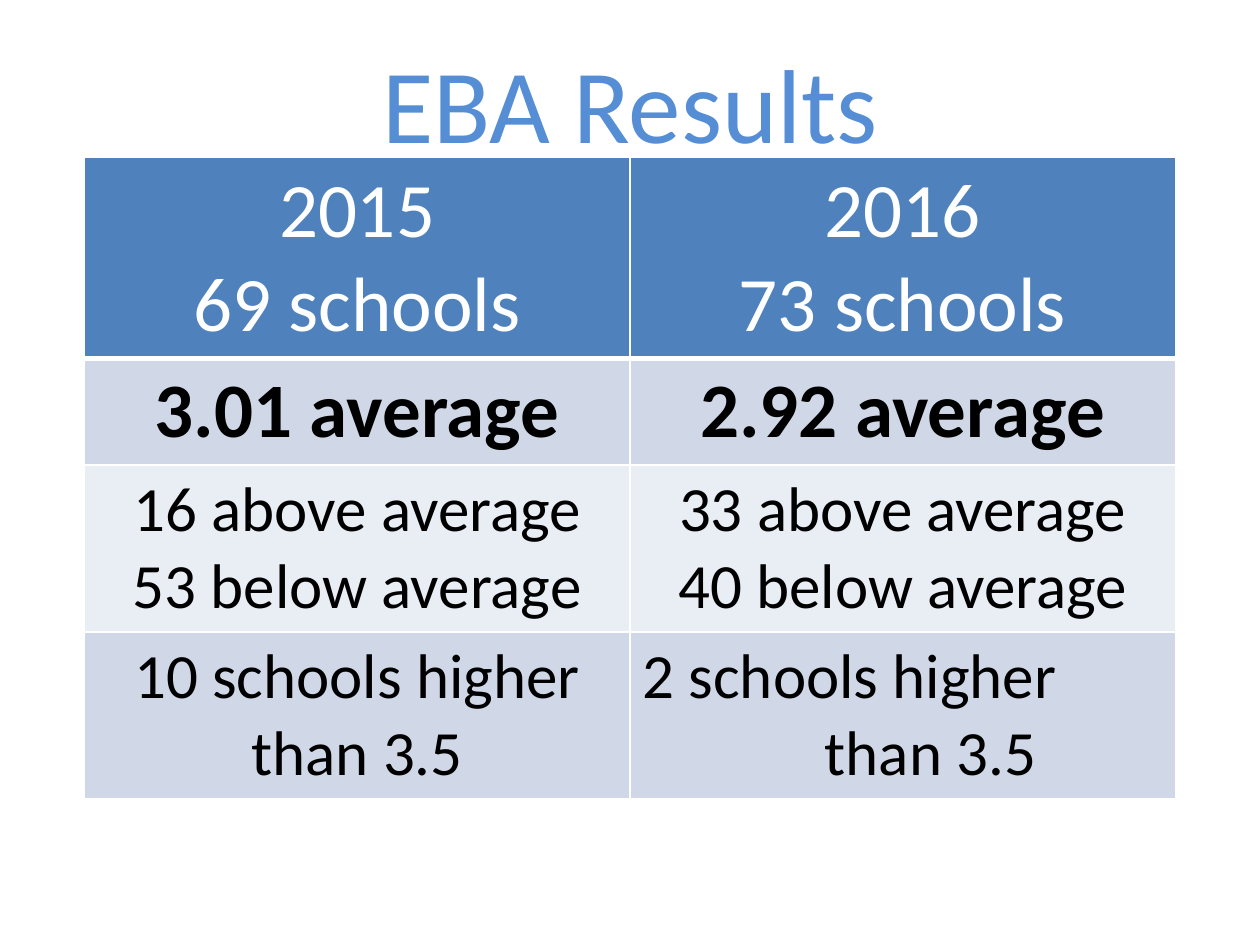
from pptx import Presentation
from pptx.dml.color import RGBColor
from pptx.enum import text
from pptx.oxml import parse_xml
from pptx.oxml.ns import nsdecls
from pptx.util import Inches, Pt


def style(p, **formats):
    """Centre a paragraph and apply font formats; color is a hex string."""
    p.alignment = text.PP_ALIGN.CENTER
    p.font.color.rgb = RGBColor.from_string(formats.pop("color"))
    for name, value in formats.items():
        setattr(p.font, name, value)


def add_borders(cell, bottom):
    """Draw white cell borders: 1 pt, with the given bottom width."""
    tc_pr = cell._tc.get_or_add_tcPr()
    for i, (side, width) in enumerate(zip("LRTB", (1, 1, 1, bottom))):
        tc_pr.insert(i, parse_xml(
            f'<a:ln{side} {nsdecls("a")} w="{Pt(width)}"><a:solidFill>'
            f'<a:srgbClr val="FFFFFF"/></a:solidFill></a:ln{side}>'))


prs = Presentation()
prs.slide_width, prs.slide_height = Inches(10), Inches(7.5)
s = prs.slides.add_slide(prs.slide_layouts[5])

title = s.shapes.title
title.left, title.top = Inches(2.25), Inches(0.25)
title.width, title.height = Inches(5.5), Inches(1.11)
title.text_frame.text = "EBA Results"
style(title.text_frame.paragraphs[0], color="558ED5", size=Pt(60), name="Calibri")

# height, fill, text colour, size, bold, bottom border, cell texts
rows = [
    (1.59, "4F81BD", "FFFFFF", 44, False, 3,
     ["2015\n69 schools", "2016\n73 schools"]),
    (0.84, "D0D8E8", "000000", 44, True, 1,
     ["3.01 average", "2.92 average"]),
    (1.32, "E9EDF4", "000000", 36, False, 1,
     ["16 above average\n53 below average", "33 above average\n40 below average"]),
    (1.32, "D0D8E8", "000000", 36, False, 1,
     ["10 schools higher than 3.5", "2 schools higher\nthan 3.5"]),
]
table = s.shapes.add_table(len(rows), 2, Inches(0.67), Inches(1.25),
                           Inches(8.66), Inches(5.07)).table
table.first_row = table.horz_banding = False

for r, (height, fill, color, size, bold, bottom, texts) in enumerate(rows):
    table.rows[r].height = Inches(height)
    for c, content in enumerate(texts):
        cell = table.cell(r, c)
        cell.fill.solid()
        cell.fill.fore_color.rgb = RGBColor.from_string(fill)
        add_borders(cell, bottom)
        cell.text_frame.text = content
        for p in cell.text_frame.paragraphs:
            style(p, color=color, size=Pt(size), bold=bold, name="Calibri")

# The last cell starts at the left and its second line sits right of centre
first, second = table.cell(3, 1).text_frame.paragraphs
first.alignment = text.PP_ALIGN.LEFT
second._p.get_or_add_pPr().set("marL", str(Inches(0.44)))

prs.save("out.pptx")
